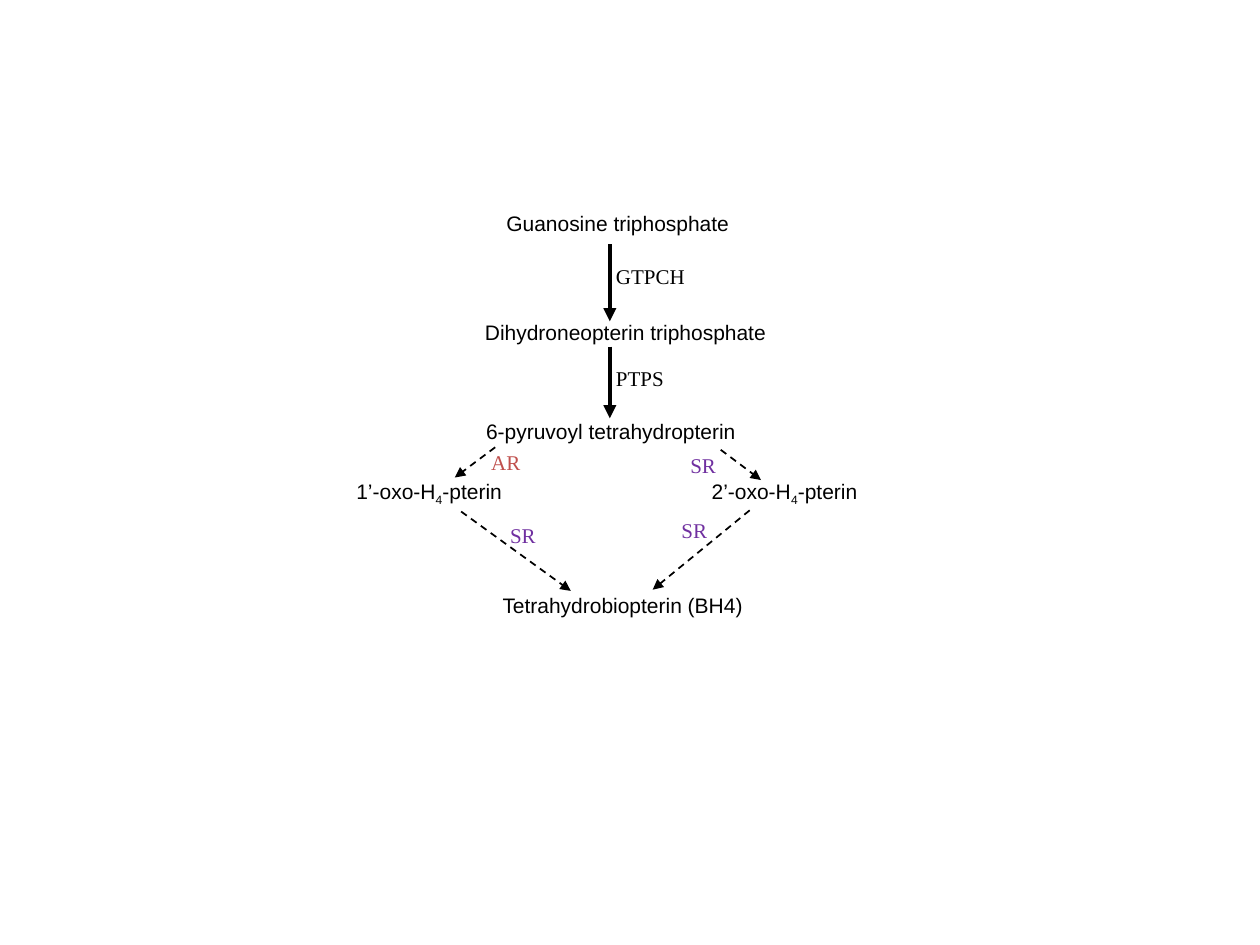
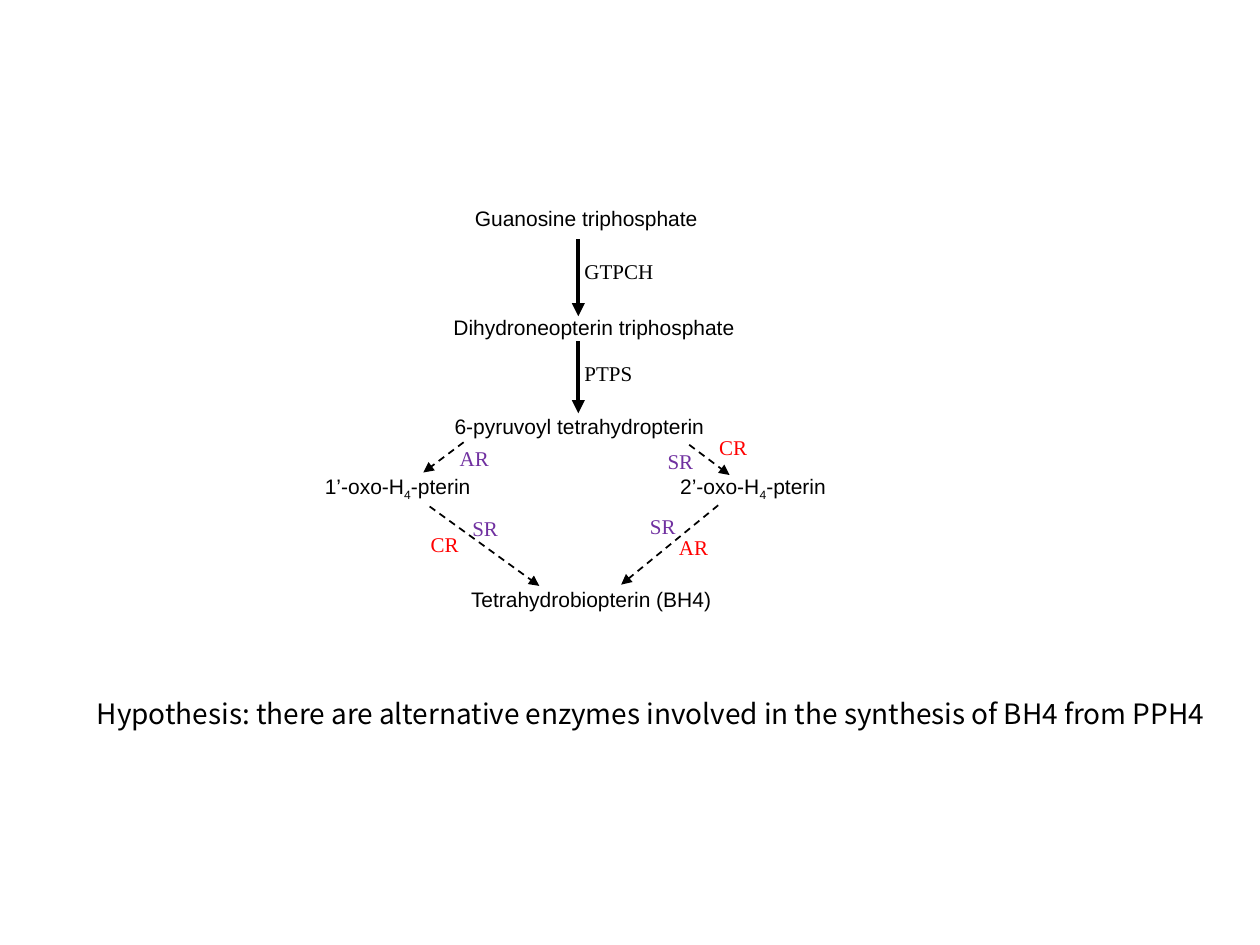
from lxml import etree
from pptx import Presentation
from pptx.dml.color import RGBColor
from pptx.enum import dml, shapes, text as text_enum
from pptx.oxml import ns
from pptx.util import Inches, Pt

COLORS = {"black": "000000", "brick": "C0504D", "purple": "7030A0", "red": "FF0000"}
SANS, SERIF, KOREAN = "Arial", "Times New Roman", "Noto Sans CJK KR"


def add_text(page, text, left, top, width, height=0.3, font=SANS, size=12,
             color="black", wrap=False):
    """Add a text box; a part between underscores is set as subscript."""
    box = page.shapes.add_textbox(Inches(left), Inches(top), Inches(width), Inches(height))
    box.text_frame.word_wrap = wrap
    box.text_frame.auto_size = text_enum.MSO_AUTO_SIZE.SHAPE_TO_FIT_TEXT
    para = box.text_frame.paragraphs[0]
    for index, part in enumerate(text.split("_")):
        span = para.add_run()
        span.text = part
        span.font.name = font
        span.font.size = Pt(size)
        span.font.color.rgb = RGBColor.from_string(COLORS[color])
        if index % 2:
            span.font._element.set("baseline", "-25000")


def add_arrow(page, start, end, weight, dashed=False):
    """Add a straight black arrow between two points."""
    points = [Inches(value) for value in (*start, *end)]
    arrow = page.shapes.add_connector(shapes.MSO_CONNECTOR.STRAIGHT, *points)
    arrow.line.color.rgb = RGBColor.from_string(COLORS["black"])
    arrow.line.width = Pt(weight)
    if dashed:
        arrow.line.dash_style = dml.MSO_LINE.DASH
    outline = arrow.line._get_or_add_ln()
    etree.SubElement(outline, ns.qn("a:tailEnd"), type="triangle")
    etree.SubElement(arrow._element.spPr, ns.qn("a:effectLst"))


# The pathway shared by both slides: text, left, top, width
COMPOUNDS = [
    ("Guanosine triphosphate", 3.92, 1.62, 3.09),
    ("Dihydroneopterin triphosphate", 3.75, 2.49, 3.45),
    ("6-pyruvoyl tetrahydropterin", 3.76, 3.27, 2.83),
    ("Tetrahydrobiopterin (BH4)", 3.89, 4.65, 2.86),
]
BRANCHES = [
    ("1’-oxo-H_4_-pterin", 2.73, 3.75, 1.4),
    ("2’-oxo-H_4_-pterin", 5.55, 3.75, 1.37),
]
MAIN_ENZYMES = [("PTPS", 4.79, 2.85, 1.08), ("GTPCH", 4.79, 2.04, 1.08)]
MAIN_ARROWS = [((4.84, 1.94), (4.84, 2.55)), ((4.84, 2.75), (4.84, 3.32))]
BRANCH_ARROWS = [
    ((3.93, 3.55), (3.61, 3.79)),
    ((3.66, 4.06), (4.53, 4.69)),
    ((5.72, 3.57), (6.04, 3.81)),
    ((5.95, 4.05), (5.18, 4.68)),
]

# Each slide: shift of the pathway, then its branch enzymes (text, left, top, color)
SLIDES = [
    ((0, 0), [
        ("AR", 3.8, 3.52, "brick"),
        ("SR", 5.38, 3.54, "purple"),
        ("SR", 3.95, 4.1, "purple"),
        ("SR", 5.31, 4.06, "purple"),
    ]),
    ((-0.25, -0.04), [
        ("AR", 3.55, 3.49, "purple"),
        ("CR", 5.61, 3.4, "red"),
        ("SR", 5.06, 4.03, "purple"),
        ("AR", 5.29, 4.19, "red"),
        ("SR", 3.65, 4.04, "purple"),
        ("SR", 5.2, 3.51, "purple"),
        ("CR", 3.32, 4.17, "red"),
    ]),
]

deck = Presentation()
deck.slide_width, deck.slide_height = Inches(10), Inches(7.5)

for (dx, dy), branch_enzymes in SLIDES:
    page = deck.slides.add_slide(deck.slide_layouts[6])
    for group, font, wrap in ((COMPOUNDS, SANS, True), (MAIN_ENZYMES, SERIF, True),
                              (BRANCHES, SANS, False)):
        for label, left, top, width in group:
            add_text(page, label, left + dx, top + dy, width, font=font, wrap=wrap)
    for arrows, weight, dashed in ((MAIN_ARROWS, 2.5, False), (BRANCH_ARROWS, 1, True)):
        for (x1, y1), (x2, y2) in arrows:
            add_arrow(page, (x1 + dx, y1 + dy), (x2 + dx, y2 + dy), weight, dashed)
    for label, left, top, color in branch_enzymes:
        width = 0.41 if label == "SR" else 0.43
        add_text(page, label, left, top, width, font=SERIF, color=color)

# The hypothesis closes the last slide
add_text(page, "Hypothesis: there are alternative enzymes involved in the synthesis "
         "of BH4 from PPH4", 0.67, 5.48, 9.01, 0.37, font=KOREAN, size=16)

deck.save("out.pptx")
